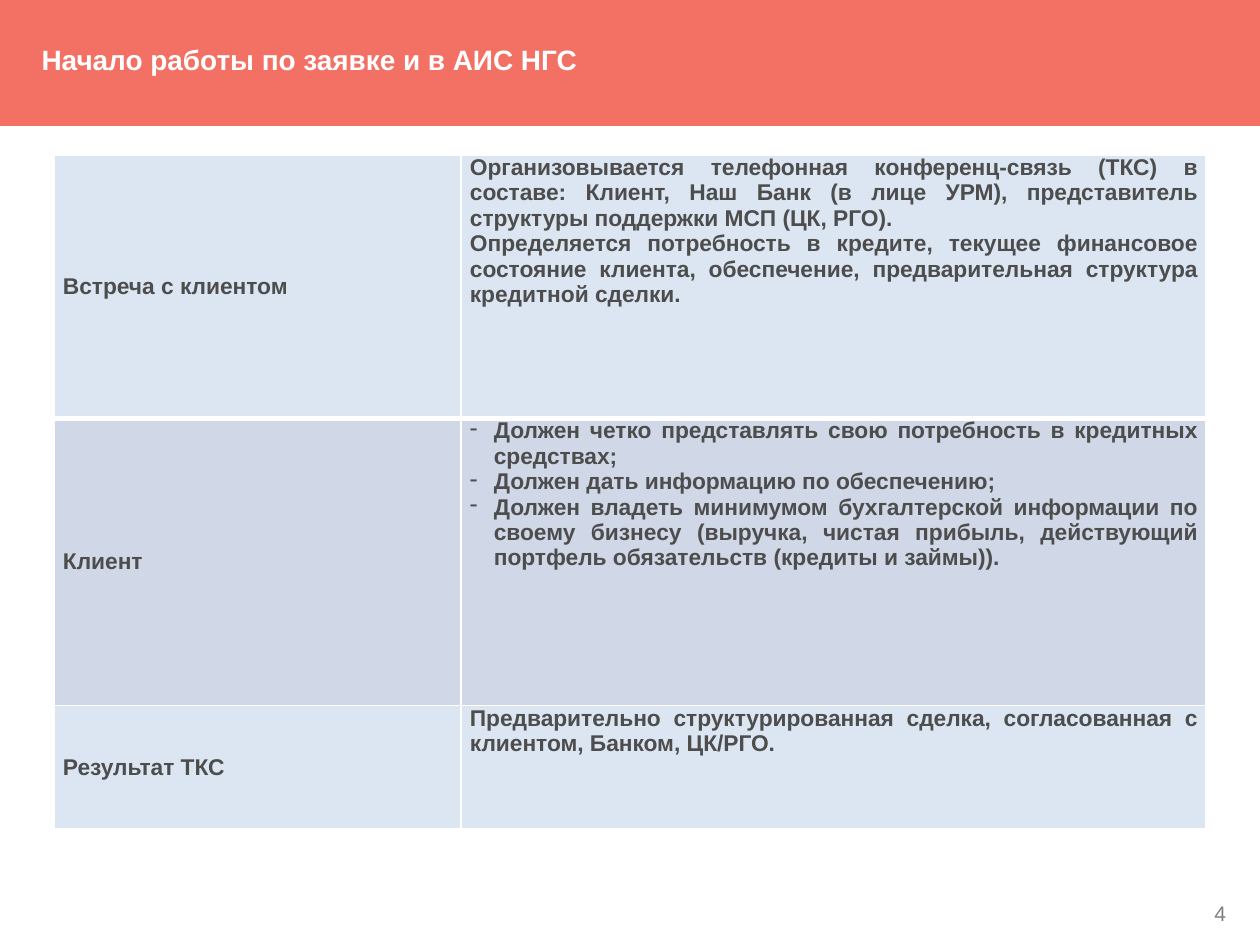
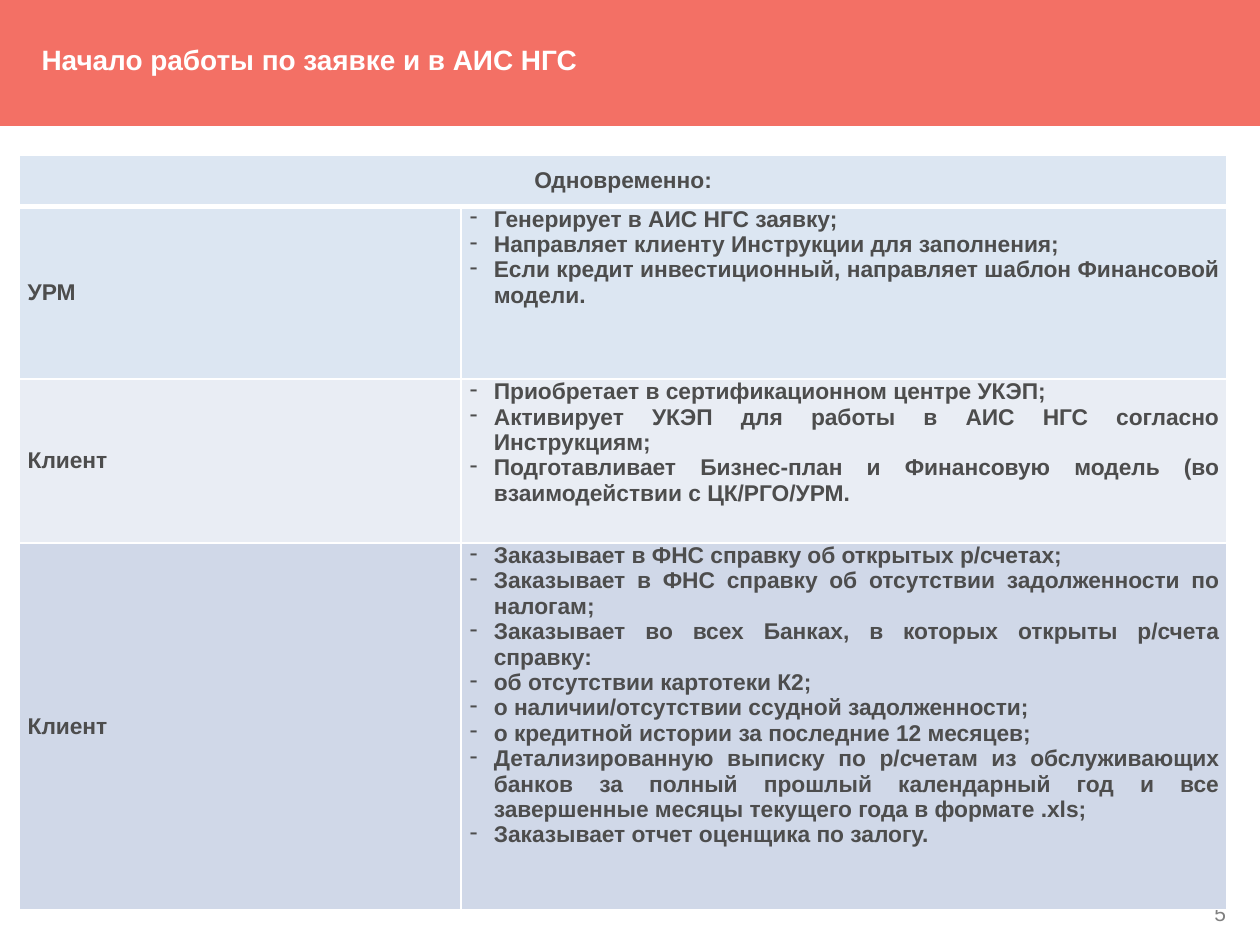
from math import cos, pi, sin

from lxml import etree
from pptx import Presentation
from pptx.dml.color import RGBColor
from pptx.enum.text import MSO_ANCHOR, MSO_AUTO_SIZE, PP_ALIGN
from pptx.oxml.ns import qn
from pptx.util import Inches, Pt

LEFT, CENTER, RIGHT, JUSTIFY = PP_ALIGN.LEFT, PP_ALIGN.CENTER, PP_ALIGN.RIGHT, PP_ALIGN.JUSTIFY
TOP, MIDDLE = MSO_ANCHOR.TOP, MSO_ANCHOR.MIDDLE
NO_AUTOFIT = MSO_AUTO_SIZE.NONE

FONT = "Arial"
WHITE = RGBColor(0xFF, 0xFF, 0xFF)
CORAL = RGBColor(0xF3, 0x70, 0x65)
GRAY = RGBColor(0x80, 0x80, 0x80)
DARK = RGBColor(0x4D, 0x4D, 0x4D)
PALE_BLUE = RGBColor(0xDC, 0xE6, 0xF2)
MID_BLUE = RGBColor(0xD0, 0xD8, 0xE8)
LIGHT_BLUE = RGBColor(0xE9, 0xED, 0xF4)

TITLE = "Начало работы по заявке и в АИС НГС"
TITLE_ONLY = 5
BAND_LEFT, BAND_TOP, BAND_RIGHT, BAND_BOTTOM = 0.15, 0.21, 9.72, 0.76
CORNER_WIDTH, CORNER_HEIGHT = 0.64, 0.09
POINTER = [(4.14, BAND_BOTTOM), (2.94, 0.83), (1.75, BAND_BOTTOM)]
TABLE_TOP = 1.23
BULLET_INDENT = 0.19

MEETING_ROWS = [
    ("Встреча с клиентом", [
        "Организовывается телефонная конференц-связь (ТКС) в составе: Клиент, Наш Банк "
        "(в лице УРМ), представитель структуры поддержки МСП (ЦК, РГО).",
        "Определяется потребность в кредите, текущее финансовое состояние клиента, "
        "обеспечение, предварительная структура кредитной сделки.",
    ], PALE_BLUE, False),
    ("Клиент", [
        "Должен четко представлять свою потребность в кредитных средствах;",
        "Должен дать информацию по обеспечению;",
        "Должен владеть минимумом бухгалтерской информации по своему бизнесу (выручка, "
        "чистая прибыль, действующий портфель обязательств (кредиты и займы)).",
    ], MID_BLUE, True),
    ("Результат ТКС", [
        "Предварительно структурированная сделка, согласованная с клиентом, Банком, ЦК/РГО.",
    ], PALE_BLUE, False),
]

PARALLEL_ROWS = [
    ("Одновременно:", None, PALE_BLUE, False),
    ("УРМ", [
        "Генерирует в АИС НГС заявку;",
        "Направляет клиенту Инструкции для заполнения;",
        "Если кредит инвестиционный, направляет шаблон Финансовой модели.",
    ], PALE_BLUE, True),
    ("Клиент", [
        "Приобретает в сертификационном центре УКЭП;",
        "Активирует УКЭП для работы в АИС НГС согласно Инструкциям;",
        "Подготавливает Бизнес-план и Финансовую модель (во взаимодействии с ЦК/РГО/УРМ.",
    ], LIGHT_BLUE, True),
    ("Клиент", [
        "Заказывает в ФНС справку об открытых р/счетах;",
        "Заказывает в ФНС справку об отсутствии задолженности по налогам;",
        "Заказывает во всех Банках, в которых открыты р/счета справку:",
        "об отсутствии картотеки К2;",
        "о наличии/отсутствии ссудной задолженности;",
        "о кредитной истории за последние 12 месяцев;",
        "Детализированную выписку по р/счетам из обслуживающих банков за полный прошлый "
        "календарный год и все завершенные месяцы текущего года в формате .хls;",
        "Заказывает отчет оценщика по залогу.",
    ], MID_BLUE, True),
]


def write_text(frame, lines, size=13, color=DARK, bold=True, align=JUSTIFY,
               spacing=None, bullet=False):
    """Fill a text frame with one formatted paragraph per line."""
    for index, line in enumerate(lines):
        para = frame.add_paragraph() if index else frame.paragraphs[0]
        para.alignment = align
        if spacing:
            para.line_spacing = spacing
        if bullet:
            add_bullet(para)
        span = para.add_run()
        span.text = line
        span.font.name = FONT
        span.font.size = Pt(size)
        span.font.bold = bold
        span.font.color.rgb = color


def add_bullet(para):
    """Give a paragraph a hanging dash."""
    properties = para._p.get_or_add_pPr()
    properties.set("marL", str(Inches(BULLET_INDENT)))
    properties.set("indent", str(-Inches(BULLET_INDENT)))
    etree.SubElement(properties, qn("a:buChar")).set("char", "-")


def set_margins(target, side, vertical):
    """Set equal side margins and equal vertical margins."""
    target.margin_left = target.margin_right = Inches(side)
    target.margin_top = target.margin_bottom = Inches(vertical)


def add_page_number(page, number):
    """Place the page number at the lower right."""
    box = page.shapes.add_textbox(Inches(9.42), Inches(7.17), Inches(0.31), Inches(0.16))
    frame = box.text_frame
    frame.word_wrap = True
    set_margins(frame, 0, 0)
    write_text(frame, [str(number)], size=12, color=GRAY, bold=False, align=RIGHT,
               spacing=Pt(12.7))


def corner_points(center_x, center_y, start, steps=12):
    """Return points along a quarter ellipse that starts at the given angle."""
    angles = [start + pi / 2 * step / steps for step in range(steps + 1)]
    return [(center_x + CORNER_WIDTH * cos(angle), center_y + CORNER_HEIGHT * sin(angle))
            for angle in angles]


def add_band(page):
    """Draw the rounded title band with its downward pointer."""
    left, right = BAND_LEFT + CORNER_WIDTH, BAND_RIGHT - CORNER_WIDTH
    top, bottom = BAND_TOP + CORNER_HEIGHT, BAND_BOTTOM - CORNER_HEIGHT
    points = (corner_points(left, top, pi) + corner_points(right, top, 1.5 * pi)
              + corner_points(right, bottom, 0) + POINTER
              + corner_points(left, bottom, pi / 2))
    builder = page.shapes.build_freeform(*points[0], scale=Inches(1))
    builder.add_line_segments(points[1:], close=True)
    band = builder.convert_to_shape()
    band.shadow.inherit = False
    band.fill.solid()
    band.fill.fore_color.rgb = CORAL
    band.line.fill.background()


def add_title(page):
    """Set the title placeholder on top of the band."""
    title = page.shapes.title
    title.left, title.top = Inches(BAND_LEFT), Inches(BAND_TOP)
    title.width = Inches(BAND_RIGHT - BAND_LEFT)
    title.height = Inches(BAND_BOTTOM - BAND_TOP)
    frame = title.text_frame
    frame.auto_size = NO_AUTOFIT
    frame.word_wrap = True
    frame.vertical_anchor = MIDDLE
    set_margins(frame, 0.18, 0.12)
    write_text(frame, [TITLE], size=16, color=WHITE, align=LEFT, spacing=0.9)
    page.shapes._spTree.append(title._element)


def set_borders(cell, row_index):
    """Draw white cell borders, thick below the first row."""
    widths = {"L": 1, "R": 1, "T": 3 if row_index == 1 else 1, "B": 3 if row_index == 0 else 1}
    properties = cell._tc.get_or_add_tcPr()
    for side, width in widths.items():
        line = etree.SubElement(properties, qn(f"a:ln{side}"), w=str(Pt(width)))
        fill = etree.SubElement(line, qn("a:solidFill"))
        etree.SubElement(fill, qn("a:srgbClr"), val=str(WHITE))


def format_cell(cell, row_index, color, anchor):
    """Set borders, fill, margins and anchor of a cell."""
    set_borders(cell, row_index)
    cell.fill.solid()
    cell.fill.fore_color.rgb = color
    set_margins(cell, 0.07, 0)
    cell.vertical_anchor = anchor


def add_steps_table(page, left, widths, heights, rows):
    """Add a table of participants and their steps."""
    table = page.shapes.add_table(len(rows), 2, Inches(left), Inches(TABLE_TOP),
                                  Inches(sum(widths)), Inches(sum(heights))).table
    table.first_row = table.horz_banding = False
    for column, width in zip(table.columns, widths):
        column.width = Inches(width)
    for index, (name, steps, color, bullet) in enumerate(rows):
        table.rows[index].height = Inches(heights[index])
        label, details = table.cell(index, 0), table.cell(index, 1)
        format_cell(label, index, color, MIDDLE)
        format_cell(details, index, color, TOP)
        write_text(label.text_frame, [name], align=JUSTIFY if steps else CENTER)
        if steps:
            write_text(details.text_frame, steps, bullet=bullet)
        else:
            label.merge(details)


def add_page(deck, number, **table):
    """Add one page with number, table, band and title."""
    page = deck.slides.add_slide(deck.slide_layouts[TITLE_ONLY])
    add_page_number(page, number)
    add_steps_table(page, **table)
    add_band(page)
    add_title(page)


def main():
    """Build and save the deck."""
    deck = Presentation()
    deck.slide_width, deck.slide_height = Inches(10), Inches(7.5)
    add_page(deck, 4, left=0.43, widths=[3.23, 5.91], heights=[2.09, 2.28, 0.98],
             rows=MEETING_ROWS)
    add_page(deck, 5, left=0.15, widths=[3.51, 6.08], heights=[0.41, 1.37, 1.3, 2.91],
             rows=PARALLEL_ROWS)
    deck.save("out.pptx")


if __name__ == "__main__":
    main()
